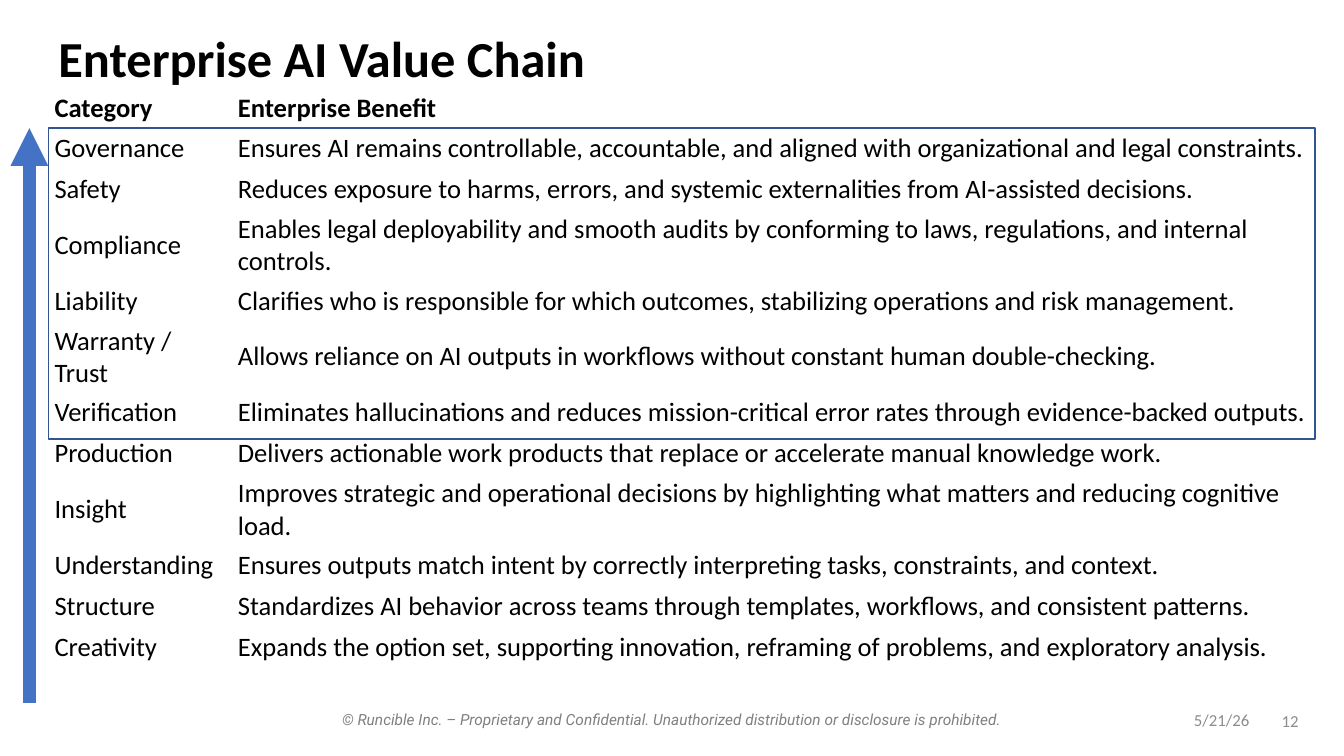
from dataclasses import dataclass

from lxml.etree import SubElement
from pptx import Presentation
from pptx.dml.color import RGBColor
from pptx.enum.shapes import MSO_CONNECTOR, MSO_SHAPE
from pptx.enum.text import MSO_ANCHOR, MSO_AUTO_SIZE, PP_ALIGN
from pptx.oxml.ns import qn
from pptx.slide import Slide
from pptx.util import Pt

BLACK = RGBColor(0x00, 0x00, 0x00)
GRAY = RGBColor(0x80, 0x80, 0x80)
LIGHT_GRAY = RGBColor(0x8C, 0x8C, 0x8C)
BLUE = RGBColor(0x44, 0x72, 0xC4)
DARK_BLUE = RGBColor(0x32, 0x54, 0x91)

LEFT, TABLE_TOP, BOX_TOP = 34.5, 64, 91.5
COL_WIDTHS = (131, 774)
HEADER_HEIGHT, ROW_HEIGHT = 16.5, 29.5


@dataclass
class Label:
    text: str
    left: float
    top: float
    width: float
    height: float
    size: float
    font: str
    color: RGBColor
    align: PP_ALIGN
    anchor: MSO_ANCHOR = MSO_ANCHOR.MIDDLE
    italic: bool = False


@dataclass
class Benefit:
    category: str
    benefit: str


FOOTER = [
    Label("12", 900, 500.5, 43, 29, 12, "Calibri", LIGHT_GRAY, PP_ALIGN.CENTER),
    Label("5/21/26", 813, 499.5, 86.5, 29, 12, "Calibri", LIGHT_GRAY, PP_ALIGN.RIGHT),
    Label("© Runcible Inc. – Proprietary and Confidential. "
          "Unauthorized distribution or disclosure is prohibited.",
          228, 503.5, 504, 21, 11, "Roboto", GRAY, PP_ALIGN.CENTER,
          MSO_ANCHOR.TOP, True),
]

ROWS = [
    Benefit("Category", "Enterprise Benefit"),
    Benefit("Governance", "Ensures AI remains controllable, accountable, and aligned "
            "with organizational and legal constraints."),
    Benefit("Safety", "Reduces exposure to harms, errors, and systemic externalities "
            "from AI-assisted decisions."),
    Benefit("Compliance", "Enables legal deployability and smooth audits by conforming "
            "to laws, regulations, and internal controls."),
    Benefit("Liability", "Clarifies who is responsible for which outcomes, "
            "stabilizing operations and risk management."),
    Benefit("Warranty / Trust", "Allows reliance on AI outputs in workflows without "
            "constant human double-checking."),
    Benefit("Verification", "Eliminates hallucinations and reduces mission-critical "
            "error rates through evidence-backed outputs."),
    Benefit("Production", "Delivers actionable work products that replace or "
            "accelerate manual knowledge work."),
    Benefit("Insight", "Improves strategic and operational decisions by highlighting "
            "what matters and reducing cognitive load."),
    Benefit("Understanding", "Ensures outputs match intent by correctly interpreting "
            "tasks, constraints, and context."),
    Benefit("Structure", "Standardizes AI behavior across teams through templates, "
            "workflows, and consistent patterns."),
    Benefit("Creativity", "Expands the option set, supporting innovation, reframing of "
            "problems, and exploratory analysis."),
]


def style_text(p, size: float, color: RGBColor, font: str = "Calibri",
               bold: bool = False, italic: bool = False) -> None:
    for r in p.runs:
        r.font.name, r.font.size = font, Pt(size)
        r.font.bold, r.font.italic = bold, italic
        r.font.color.rgb = color


def add_title(s: Slide, text: str) -> None:
    sp = s.shapes.title
    sp.left, sp.top, sp.width, sp.height = Pt(LEFT), Pt(29), Pt(875), Pt(30)
    tf = sp.text_frame
    tf.text = text
    tf.auto_size = MSO_AUTO_SIZE.NONE
    tf.vertical_anchor = MSO_ANCHOR.MIDDLE
    p = tf.paragraphs[0]
    p.alignment, p.line_spacing = PP_ALIGN.LEFT, 0.9
    style_text(p, 36, BLACK, bold=True)


def add_label(s: Slide, label: Label) -> None:
    sp = s.shapes.add_textbox(Pt(label.left), Pt(label.top),
                              Pt(label.width), Pt(label.height))
    tf = sp.text_frame
    tf.word_wrap = True
    tf.vertical_anchor = label.anchor
    tf.text = label.text
    p = tf.paragraphs[0]
    p.alignment = label.align
    style_text(p, label.size, label.color, label.font, italic=label.italic)


def add_benefit_table(s: Slide, rows: list[Benefit]) -> None:
    height = HEADER_HEIGHT + ROW_HEIGHT * (len(rows) - 1)
    table = s.shapes.add_table(len(rows), 2, Pt(LEFT), Pt(TABLE_TOP),
                               Pt(sum(COL_WIDTHS)), Pt(height)).table
    table.first_row = table.horz_banding = False
    for column, width in zip(table.columns, COL_WIDTHS):
        column.width = Pt(width)
    for i, row in enumerate(rows):
        table.rows[i].height = Pt(ROW_HEIGHT if i else HEADER_HEIGHT)
        for cell, text in zip(table.rows[i].cells, (row.category, row.benefit)):
            cell.fill.background()
            cell.vertical_anchor = MSO_ANCHOR.MIDDLE
            cell.margin_left = cell.margin_right = Pt(4.5)
            cell.margin_top = cell.margin_bottom = Pt(2.25)
            cell.text_frame.text = text
            style_text(cell.text_frame.paragraphs[0], 19, BLACK, bold=i == 0)


def add_outline(s: Slide) -> None:
    sp = s.shapes.add_shape(MSO_SHAPE.RECTANGLE, Pt(LEFT), Pt(BOX_TOP),
                            Pt(sum(COL_WIDTHS)), Pt(222))
    sp.shadow.inherit = False
    sp.fill.background()
    sp.line.color.rgb, sp.line.width = DARK_BLUE, Pt(1)


def add_up_arrow(s: Slide) -> None:
    arrow = s.shapes.add_connector(MSO_CONNECTOR.STRAIGHT, Pt(21), Pt(502.5),
                                   Pt(21), Pt(BOX_TOP))
    arrow.line.color.rgb, arrow.line.width = BLUE, Pt(9)
    SubElement(arrow.line._get_or_add_ln(), qn("a:tailEnd"), type="triangle")
    SubElement(arrow._element.spPr, qn("a:effectLst"))


def main() -> None:
    prs = Presentation()
    prs.slide_width, prs.slide_height = Pt(960), Pt(540)
    s = prs.slides.add_slide(prs.slide_layouts[5])

    # Footer and title
    for label in FOOTER:
        add_label(s, label)
    add_title(s, "Enterprise AI Value Chain")

    # Value chain table, framed rows and upward arrow
    add_benefit_table(s, ROWS)
    add_outline(s)
    add_up_arrow(s)

    prs.save("out.pptx")


if __name__ == "__main__":
    main()
